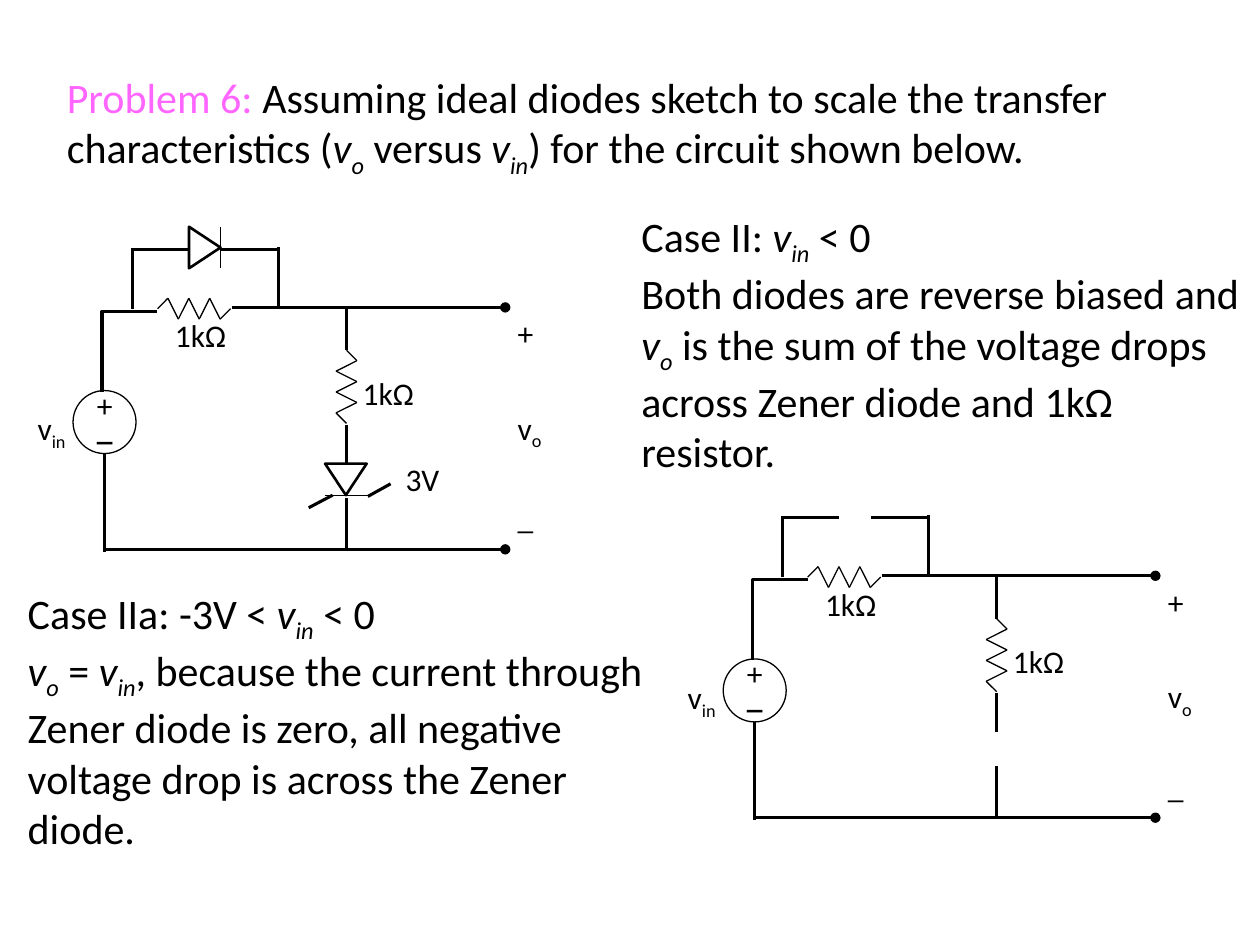
import itertools

import lxml.etree
import pptx
import pptx.dml.color
import pptx.enum.shapes
import pptx.enum.text
import pptx.oxml.ns
import pptx.util

Inches = pptx.util.Inches
Pt = pptx.util.Pt
qn = pptx.oxml.ns.qn
SHAPE = pptx.enum.shapes.MSO_SHAPE
STRAIGHT = pptx.enum.shapes.MSO_CONNECTOR.STRAIGHT

BLACK = pptx.dml.color.RGBColor(0x00, 0x00, 0x00)
PINK = pptx.dml.color.RGBColor(0xFF, 0x66, 0xFF)
FONT = "Calibri"
THIN, MEDIUM, THICK = 0.75, 1.5, 1.75

V_IN = [("v", "italic"), ("in", "italic sub")]
V_O = [("v", "italic"), ("o", "italic sub")]


def add_runs(p, runs, size):
    for text, style in runs:
        r = p.add_run()
        r.text = text
        r.font.name = FONT
        r.font.size = Pt(size)
        r.font.color.rgb = PINK if "pink" in style else BLACK
        r.font.italic = "italic" in style
        r.font.bold = "bold" in style
        if "sub" in style:
            r.font._element.set("baseline", "-25000")


def fill_placeholder(sp, box, paragraphs):
    sp.left, sp.top, sp.width, sp.height = [Inches(v) for v in box]
    tf = sp.text_frame
    tf.word_wrap = True
    tf.auto_size = pptx.enum.text.MSO_AUTO_SIZE.NONE
    tf.vertical_anchor = pptx.enum.text.MSO_ANCHOR.BOTTOM
    for i, runs in enumerate(paragraphs):
        p = tf.add_paragraph() if i else tf.paragraphs[0]
        p.alignment = pptx.enum.text.PP_ALIGN.LEFT
        p.space_before = Pt(0)
        pPr = p._p.get_or_add_pPr()
        pPr.set("marL", "0")
        pPr.set("indent", "0")
        lxml.etree.SubElement(pPr, qn("a:buNone"))
        add_runs(p, runs, 24)


def add_label(s, x, y, w, h, paragraphs, spacing=None):
    tf = s.shapes.add_textbox(Inches(x), Inches(y), Inches(w), Inches(h)).text_frame
    tf.word_wrap = False
    for i, runs in enumerate(paragraphs):
        p = tf.add_paragraph() if i else tf.paragraphs[0]
        p.line_spacing = spacing
        add_runs(p, runs, 18)


def outline(sp, width):
    sp.shadow.inherit = False
    sp.fill.background()
    sp.line.color.rgb = BLACK
    sp.line.width = Pt(width)


def add_wire(shapes, x, y, start, end, width=THICK, dot=False):
    (x1, y1), (x2, y2) = start, end
    c = shapes.add_connector(STRAIGHT, Inches(x + x1), Inches(y + y1),
                             Inches(x + x2), Inches(y + y2))
    c.line.color.rgb = BLACK
    c.line.width = Pt(width)
    if dot:
        lxml.etree.SubElement(c.line._get_or_add_ln(), qn("a:tailEnd"), type="oval")
    lxml.etree.SubElement(c._element.spPr, qn("a:effectLst"))


def add_resistor(s, x, y, vertical=False):
    step = 0.58 / 7
    points = []
    for i, side in enumerate((0, -1, 1, -1, 1, -1, 1, 0)):
        along, across = i * step, side * step
        points.append((-across, along) if vertical else (along, across))
    group = s.shapes.add_group_shape()
    for start, end in itertools.pairwise(points):
        add_wire(group.shapes, x, y, start, end, THIN)


def add_source(s, x, y):
    sp = s.shapes.add_shape(SHAPE.OVAL, Inches(x), Inches(y), Inches(0.5), Inches(0.5))
    outline(sp, THIN)
    add_label(s, x + 0.09, y + 0.02, 0.27, 0.48, [[("+", "")], [("_", "bold")]], 0.6)


def add_triangle(s, x, y, rotation):
    sp = s.shapes.add_shape(SHAPE.ISOSCELES_TRIANGLE, Inches(x), Inches(y),
                            Inches(0.33), Inches(0.25))
    sp.rotation = rotation
    outline(sp, MEDIUM)


def add_diodes(s, x, y):
    add_triangle(s, x + 1.26, y + 0.04, 90)
    add_triangle(s, x + 2.38, y + 1.88, 180)
    for start, end, width in (((1.55, 0), (1.55, 0.33), THIN),
                              ((2.72, 2.13), (2.38, 2.13), THIN),
                              ((2.72, 2.14), (2.9, 2.04), THICK),
                              ((2.25, 2.23), (2.44, 2.13), THICK)):
        add_wire(s.shapes, x, y, start, end, width)
    add_label(s, x + 2.92, y + 1.8, 0.51, 0.4, [[("3V", "")]])


def add_circuit(s, x, y):
    add_source(s, x + 0.38, y + 1.3)
    add_resistor(s, x + 1.05, y + 0.65)
    add_resistor(s, x + 2.55, y + 0.98, vertical=True)

    corner = s.shapes.build_freeform(Inches(x + 0.61), Inches(y + 1.31))
    corner.add_line_segments([(Inches(x + 0.61), Inches(y + 0.67)),
                              (Inches(x + 1.05), Inches(y + 0.67))], close=False)
    outline(corner.convert_to_shape(), THICK)

    for start, end in (((2.55, 0.98), (2.55, 0.65)),
                       ((2.55, 1.57), (2.55, 1.88)),
                       ((2.55, 2.15), (2.55, 2.56)),
                       ((0.63, 2.58), (0.63, 1.8)),
                       ((0.84, 0.18), (1.3, 0.18)),
                       ((1.55, 0.18), (2.01, 0.18)),
                       ((0.85, 0.18), (0.85, 0.65)),
                       ((2.01, 0.16), (2.01, 0.63))):
        add_wire(s.shapes, x, y, start, end)
    add_wire(s.shapes, x, y, (1.64, 0.64), (3.81, 0.64), dot=True)
    add_wire(s.shapes, x, y, (0.63, 2.56), (3.81, 2.56), dot=True)

    add_label(s, x, y + 1.4, 0.46, 0.4, [[("v", ""), ("in", "sub")]])
    for left, top in ((1.09, 0.66), (2.58, 1.12)):
        add_label(s, x + left, y + top, 0.66, 0.4, [[("1kΩ", "")]])
    outputs = ([("+", "")], [("v", ""), ("o", "sub")], [("_", "")])
    for i, runs in enumerate(outputs):
        add_label(s, x + 3.81, y + 0.75 + 0.73 * i, 0.56, 0.28, [runs], 0.6)


def main():
    prs = pptx.Presentation()
    prs.slide_width, prs.slide_height = Inches(10), Inches(7.5)
    s = prs.slides.add_slide(prs.slide_layouts[3])
    title, case_two, case_two_a = s.placeholders

    fill_placeholder(title, (0.43, 0.25, 9.06, 1.22), [
        [("Problem 6: ", "pink"),
         ("Assuming ideal diodes sketch to scale the transfer characteristics (", ""),
         *V_O, (" versus ", ""), *V_IN, (") for the circuit shown below.", "")]])
    fill_placeholder(case_two, (4.99, 1.8, 4.98, 2.03), [
        [("Case II: ", ""), *V_IN, (" < 0", "")],
        [("Both diodes are reverse biased and ", ""), *V_O,
         (" is the sum of the voltage drops across Zener diode and 1kΩ resistor.", "")]])
    fill_placeholder(case_two_a, (0.12, 4.66, 5.24, 2.16), [
        [("Case IIa: -3V < ", ""), *V_IN, (" < 0", "")],
        [*V_O, (" = ", ""), *V_IN,
         (", because the current through Zener diode is zero, all negative "
          "voltage drop is across the Zener diode.", "")]])

    add_circuit(s, 0.2, 1.8)
    add_diodes(s, 0.2, 1.8)
    add_circuit(s, 5.36, 3.93)
    prs.save("out.pptx")


if __name__ == "__main__":
    main()
